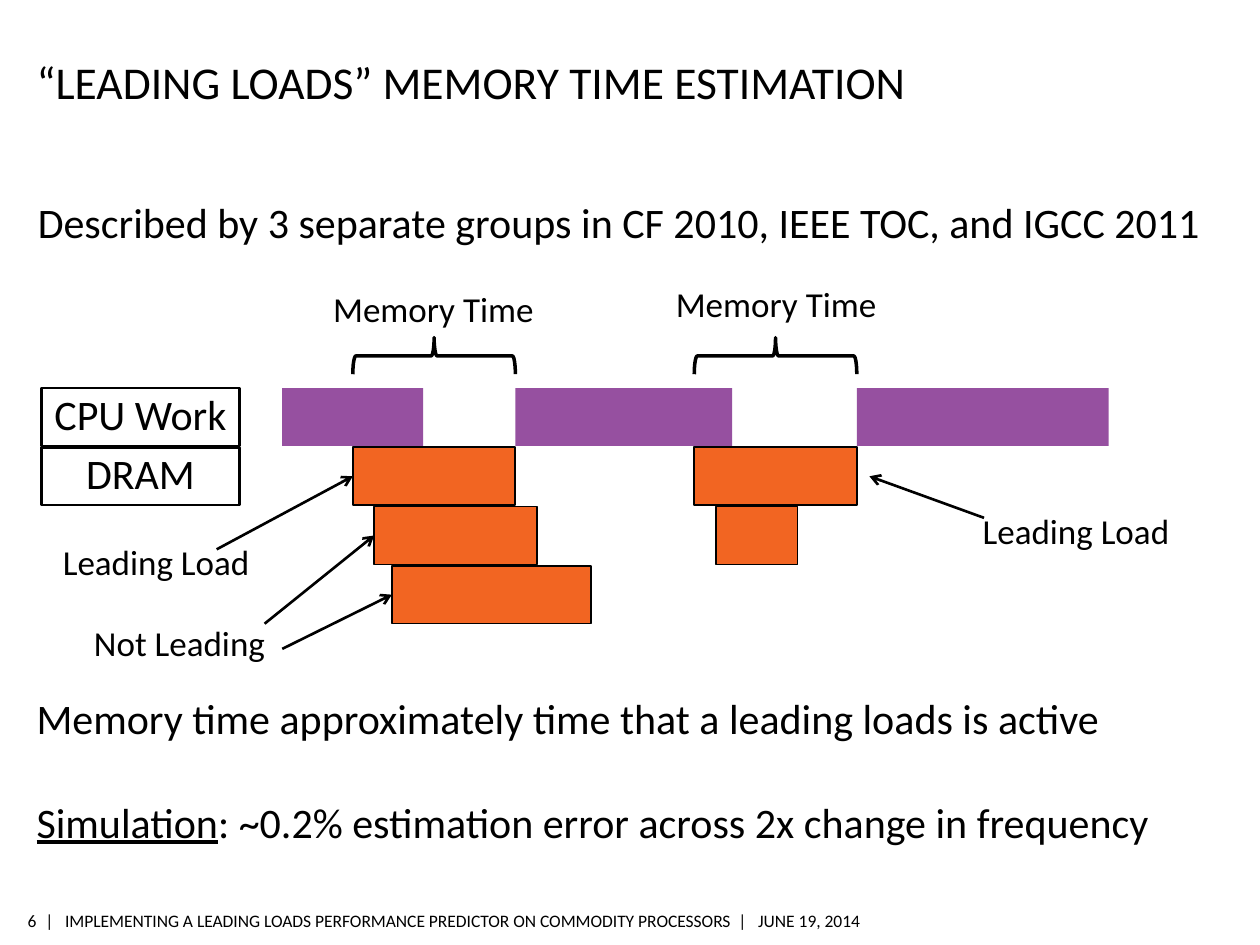
import pptx
import pptx.util
import pptx.dml.color
import pptx.enum.shapes
import pptx.enum.text
import pptx.oxml.ns
from lxml import etree

Inches = pptx.util.Inches
Pt = pptx.util.Pt
SHAPE = pptx.enum.shapes.MSO_SHAPE
ANCHOR = pptx.enum.text.MSO_ANCHOR
ALIGN = pptx.enum.text.PP_ALIGN
qn = pptx.oxml.ns.qn

THEME = {
    "font": "Calibri",
    "text": "000000", "line": "000000", "box": "FFFFFF",
    "cpu": "9650A0", "dram": "F26522",
    "title_size": 26, "body_size": 24, "label_size": 20, "footer_size": 10,
}

TITLE = "“LEADING LOADS” MEMORY TIME ESTIMATION"
INTRO = "Described by 3 separate groups in CF 2010, IEEE TOC, and IGCC 2011"
# top, runs as (text, underlined)
CONCLUSIONS = [
    (5.45, [("Memory time approximately time that a leading loads is active", False)]),
    (6.27, [("Simulation", True),
            (": ~0.2% estimation error across 2x change in frequency", False)]),
]
# left, width, alignment, text
FOOTER = [
    (0.13, 0.16, ALIGN.RIGHT, "6"),
    (0.36, 6.57, ALIGN.LEFT, "|   IMPLEMENTING A LEADING LOADS PERFORMANCE PREDICTOR "
                             "ON COMMODITY PROCESSORS  |   JUNE 19, 2014"),
]

TIMELINE_TOP, ROW_PITCH, BAR_HEIGHT = 3.08, 0.47, 0.46
ROW_NAMES = ["CPU Work", "DRAM"]
# left, width
CPU_BARS = [(2.24, 0.57), (2.8, 0.56), (4.09, 1.72), (6.8, 2)]
LEADING_LOADS = [(2.8, 1.29), (5.51, 1.29)]
# row, left, width
OTHER_LOADS = [(2, 2.97, 1.29), (3, 3.11, 1.58), (2, 5.68, 0.65)]
# left, top, width, text
LABELS = [
    (2.28, 2.27, 2.32, "Memory Time"),
    (5, 2.23, 2.32, "Memory Time"),
    (0.08, 4.28, 2.32, "Leading Load"),
    (0.47, 4.92, 1.91, "Not Leading"),
    (7.65, 4.03, 1.78, "Leading Load"),
]
# start x, start y, end x, end y
ARROWS = [
    (1.72, 4.36, 2.8, 3.78),
    (2.1, 4.95, 2.97, 4.25),
    (2.24, 5.15, 3.11, 4.72),
    (7.81, 4.11, 6.9, 3.78),
]
BRACE_TOP, BRACE_DEPTH = 2.68, 0.29


def color(name):
    return pptx.dml.color.RGBColor.from_string(THEME[name])


def place(shape, left, top, width, height):
    shape.left, shape.top = Inches(left), Inches(top)
    shape.width, shape.height = Inches(width), Inches(height)


def write(shape, runs, size, align=ALIGN.LEFT, anchor=ANCHOR.TOP,
          insets=(0, 0.05, 0, 0.05), spacing=1.0, wrap=True):
    frame = shape.text_frame
    frame.word_wrap = wrap
    frame.auto_size = pptx.enum.text.MSO_AUTO_SIZE.NONE
    frame.vertical_anchor = anchor
    (frame.margin_left, frame.margin_top,
     frame.margin_right, frame.margin_bottom) = map(Inches, insets)
    paragraph = frame.paragraphs[0]
    if shape.is_placeholder:
        properties = paragraph._p.get_or_add_pPr()
        properties.set("marL", "0")
        properties.set("indent", "0")
        etree.SubElement(properties, qn("a:buNone"))
    paragraph.alignment = align
    paragraph.space_before = Pt(0)
    paragraph.line_spacing = spacing
    paragraph.font.name = THEME["font"]
    paragraph.font.size = Pt(THEME[size])
    paragraph.font.color.rgb = color("text")
    for text, underlined in runs:
        run = paragraph.add_run()
        run.text = text
        if underlined:
            run.font.underline = True


def write_label(shape, text, size):
    write(shape, [(text, False)], size, ALIGN.CENTER, ANCHOR.MIDDLE,
          (0.1, 0.05, 0.1, 0.05), 0.9)


def add_text_box(slide, left, top, width, height):
    return slide.shapes.add_textbox(*map(Inches, (left, top, width, height)))


def add_bar(slide, row, left, width, fill, line_width=None):
    top = TIMELINE_TOP + row * ROW_PITCH
    bar = slide.shapes.add_shape(
        SHAPE.RECTANGLE, *map(Inches, (left, top, width, BAR_HEIGHT)))
    bar.shadow.inherit = False
    bar.fill.solid()
    bar.fill.fore_color.rgb = color(fill)
    if line_width:
        bar.line.color.rgb = color("line")
        bar.line.width = Pt(line_width)
    else:
        bar.line.fill.background()
    return bar


def add_brace_above(slide, left, width):
    """A left brace turned a quarter, so its box is centred on the span."""
    brace = slide.shapes.add_shape(SHAPE.LEFT_BRACE, *map(Inches, (
        left + (width - BRACE_DEPTH) / 2, BRACE_TOP + (BRACE_DEPTH - width) / 2,
        BRACE_DEPTH, width)))
    brace.rotation = 90
    brace.shadow.inherit = False
    brace.fill.background()
    brace.line.color.rgb = color("line")
    brace.line.width = Pt(2)


def add_arrow(slide, ends):
    arrow = slide.shapes.add_connector(
        pptx.enum.shapes.MSO_CONNECTOR.STRAIGHT, *map(Inches, ends))
    arrow.line.color.rgb = color("line")
    arrow.line.width = Pt(1.5)
    etree.SubElement(arrow.line._get_or_add_ln(), qn("a:tailEnd"), type="arrow")
    etree.SubElement(arrow._element.spPr, qn("a:effectLst"))


def main():
    presentation = pptx.Presentation()
    presentation.slide_width, presentation.slide_height = Inches(10), Inches(7.5)
    slide = presentation.slides.add_slide(presentation.slide_layouts[1])

    title, body = slide.placeholders
    place(title, 0.29, 0.34, 8.4, 0.52)
    write(title, [(TITLE, False)], "title_size", anchor=ANCHOR.BOTTOM,
          insets=(0, 0.05, 0, 0))
    place(body, 0.3, 1.51, 9.4, 0.62)
    write(body, [(INTRO, False)], "body_size")

    for top, runs in CONCLUSIONS:
        write(add_text_box(slide, 0.29, top, 9.4, 0.62), runs, "body_size")
    for left, width, align, text in FOOTER:
        write(add_text_box(slide, left, 7.18, width, 0.26), [(text, False)],
              "footer_size", align, ANCHOR.MIDDLE, (0, 0.04, 0, 0.04), wrap=False)

    for row, name in enumerate(ROW_NAMES):
        write_label(add_bar(slide, row, 0.33, 1.57, "box", 1.5), name, "body_size")
    for left, width in CPU_BARS:
        add_bar(slide, 0, left, width, "cpu")
    for left, width in LEADING_LOADS:
        add_bar(slide, 1, left, width, "dram", 1)
        add_brace_above(slide, left, width)
    for row, left, width in OTHER_LOADS:
        add_bar(slide, row, left, width, "dram", 1)

    for ends in ARROWS:
        add_arrow(slide, ends)
    for left, top, width, text in LABELS:
        write_label(add_text_box(slide, left, top, width, 0.4), text, "label_size")

    presentation.save("out.pptx")


if __name__ == "__main__":
    main()
